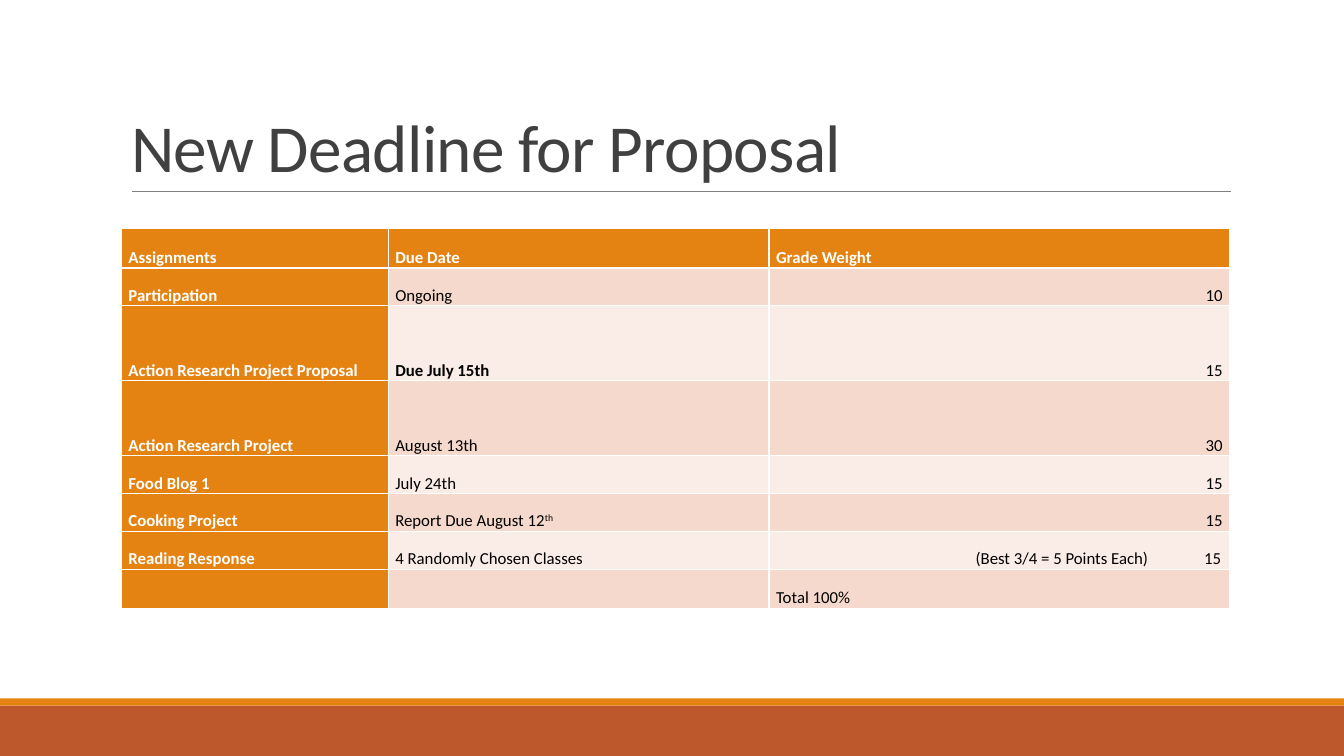
from dataclasses import dataclass

from lxml import etree
from pptx import Presentation
from pptx.dml.color import RGBColor
from pptx.enum import shapes, text
from pptx.oxml.ns import qn
from pptx.slide import Slide
from pptx.util import Pt


@dataclass(frozen=True)
class Theme:
    font: str = "Calibri"
    title_size: float = 48
    table_size: float = 12
    title: str = "404040"
    rule: str = "808080"
    orange: str = "E48312"
    rust: str = "BD582C"
    bands: tuple[str, str] = ("F5D9CC", "FAEDE7")
    light: str = "FFFFFF"
    dark: str = "000000"


@dataclass(frozen=True)
class Bar:
    top: float
    height: float
    color: str


@dataclass(frozen=True)
class Row:
    height: float
    assignment: str = ""
    due: str = ""
    weight: str = ""
    due_suffix: str = ""
    due_bold: bool = False


THEME = Theme()
WIDTH, HEIGHT = 960, 540
TABLE_LEFT, TABLE_TOP = 86.8, 163
COLUMNS = (190.6, 272, 329)
NOTE_TABS = (266, 318)  # right-aligned stops for the note and its number
BARS = (Bar(504, 36, THEME.rust), Bar(498.8, 5.2, THEME.orange))
ROWS = (
    Row(28.5, "Assignments", "Due Date", "Grade Weight"),
    Row(27, "Participation", "Ongoing", "10"),
    Row(53.6, "Action Research Project Proposal", "Due July 15th", "15", due_bold=True),
    Row(53.6, "Action Research Project", "August 13th", "30"),
    Row(27, "Food Blog 1", "July 24th", "15"),
    Row(27, "Cooking Project", "Report Due August 12", "15", due_suffix="th"),
    Row(27, "Reading Response", "4 Randomly Chosen Classes", "\t(Best 3/4 = 5 Points Each)\t15"),
    Row(28, weight="Total 100%"),
)


def rgb(color: str) -> RGBColor:
    return RGBColor.from_string(color)


def style_font(p, size: float, color: str, bold: bool = False) -> None:
    p.font.name, p.font.size, p.font.bold = THEME.font, Pt(size), bold
    p.font.color.rgb = rgb(color)


def add_bar(slide: Slide, bar: Bar) -> None:
    sp = slide.shapes.add_shape(
        shapes.MSO_SHAPE.RECTANGLE, 0, Pt(bar.top), Pt(WIDTH), Pt(bar.height))
    sp.shadow.inherit = False
    sp.fill.solid()
    sp.fill.fore_color.rgb = rgb(bar.color)
    sp.line.fill.background()


def add_rule(slide: Slide) -> None:
    line = slide.shapes.add_connector(
        shapes.MSO_CONNECTOR.STRAIGHT, Pt(94.5), Pt(136.8), Pt(879), Pt(136.8))
    line.line.color.rgb = rgb(THEME.rule)
    line.line.width = Pt(0.5)
    etree.SubElement(line._element.spPr, qn("a:effectLst"))


def set_title(slide: Slide, wording: str) -> None:
    sp = slide.shapes.title
    sp.left, sp.top, sp.width, sp.height = Pt(86.4), Pt(22.6), Pt(792), Pt(114.2)
    tf = sp.text_frame
    tf.text = wording
    tf.word_wrap = True
    tf.auto_size = text.MSO_AUTO_SIZE.NONE
    tf.vertical_anchor = text.MSO_ANCHOR.BOTTOM
    p = tf.paragraphs[0]
    p.alignment = text.PP_ALIGN.LEFT
    p.line_spacing = 0.85
    style_font(p, THEME.title_size, THEME.title)
    p.runs[0]._r.get_or_add_rPr().set("spc", "-50")


def add_note_tabs(p) -> None:
    tabs = etree.Element(qn("a:tabLst"))
    for stop in NOTE_TABS:
        etree.SubElement(tabs, qn("a:tab"), pos=str(Pt(stop)), algn="r")
    p._p.get_or_add_pPr().insert(0, tabs)


def fill_cell(cell, wording: str, fill: str, color: str, bold: bool):
    cell.fill.solid()
    cell.fill.fore_color.rgb = rgb(fill)
    cell.margin_left = cell.margin_right = Pt(5)
    cell.margin_top = cell.margin_bottom = 0
    cell.vertical_anchor = text.MSO_ANCHOR.BOTTOM
    p = cell.text_frame.paragraphs[0]
    style_font(p, THEME.table_size, color, bold)
    if wording:
        p.add_run().text = wording
    return p


def add_grades(slide: Slide) -> None:
    frame = slide.shapes.add_table(
        len(ROWS), len(COLUMNS), Pt(TABLE_LEFT), Pt(TABLE_TOP),
        Pt(sum(COLUMNS)), Pt(sum(row.height for row in ROWS)))
    table = frame.table
    table.first_col = True
    for column, width in zip(table.columns, COLUMNS):
        column.width = Pt(width)
    for i, row in enumerate(ROWS):
        table.rows[i].height = Pt(row.height)
        for j, wording in enumerate((row.assignment, row.due, row.weight)):
            heading = i == 0 or j == 0
            p = fill_cell(
                table.cell(i, j), wording,
                THEME.orange if heading else THEME.bands[(i - 1) % 2],
                THEME.light if heading else THEME.dark,
                heading or (j == 1 and row.due_bold))
            if j == 1 and row.due_suffix:
                r = p.add_run()
                r.text = row.due_suffix
                r._r.get_or_add_rPr().set("baseline", "30000")
            if "\t" in wording:
                add_note_tabs(p)
            elif wording.isdigit():
                p.alignment = text.PP_ALIGN.RIGHT


def main() -> None:
    prs = Presentation()
    prs.slide_width, prs.slide_height = Pt(WIDTH), Pt(HEIGHT)
    slide = prs.slides.add_slide(prs.slide_layouts.get_by_name("Title Only"))
    # Footer bars and title rule
    for bar in BARS:
        add_bar(slide, bar)
    add_rule(slide)
    # Title and grade table
    set_title(slide, "New Deadline for Proposal")
    add_grades(slide)
    prs.save("out.pptx")


if __name__ == "__main__":
    main()
